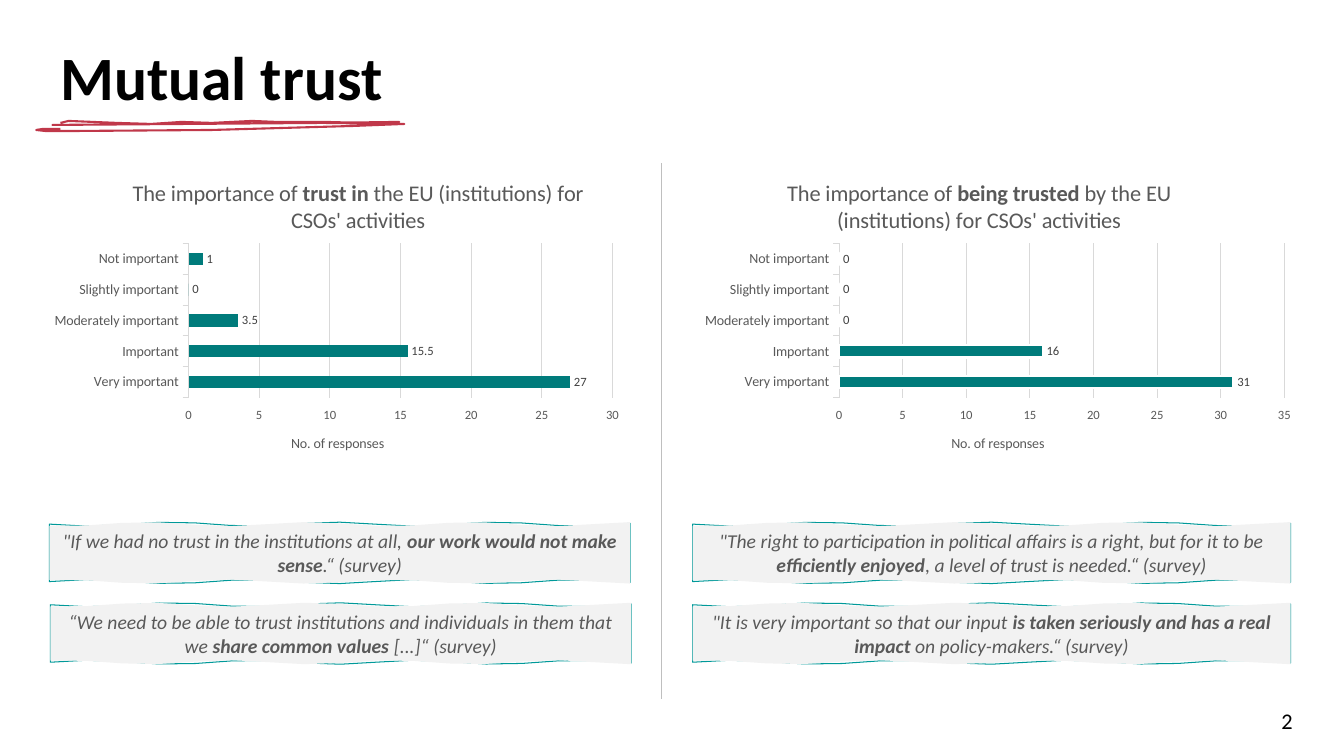
"""Build the slide on mutual trust between CSOs and the EU."""
from math import sin
from lxml import etree
from pptx import Presentation
from pptx.chart.data import CategoryChartData
from pptx.dml.color import RGBColor
from pptx.enum.chart import XL_CHART_TYPE, XL_LABEL_POSITION, XL_TICK_MARK
from pptx.enum.shapes import MSO_CONNECTOR
from pptx.enum.text import MSO_ANCHOR, PP_ALIGN
from pptx.oxml.ns import qn
from pptx.util import Inches, Pt

BAR = XL_CHART_TYPE.BAR_CLUSTERED
END = XL_LABEL_POSITION.OUTSIDE_END
OUT = XL_TICK_MARK.OUTSIDE
MID = MSO_ANCHOR.MIDDLE
CENTER, RIGHT = PP_ALIGN.CENTER, PP_ALIGN.RIGHT
LINE = MSO_CONNECTOR.STRAIGHT
HEX = {"black": "000000", "gray": "595959", "dark": "404040", "grid": "D9D9D9",
       "rule": "BFBFBF", "paper": "F2F2F2", "white": "FFFFFF",
       "bar": "007B7B", "edge": "009999", "red": "C0384A"}
INK = {name: RGBColor.from_string(code) for name, code in HEX.items()}


def write(para, parts, size, ink, bold=(), italic=False):
    """Fill a paragraph with runs; bold lists the indexes of bold ones."""
    for i, part in enumerate(parts):
        run = para.add_run()
        run.text = part
        font = run.font
        font.name, font.size, font.color.rgb = "Calibri", Pt(size), INK[ink]
        font.bold, font.italic = i in bold, italic


def place(box, **spots):
    """Give a chart part a fixed place, as shares of the chart."""
    layout = box.find(qn("c:layout"))
    if layout is None:
        layout = etree.Element(qn("c:layout"))
        box.insert(0, layout)
    manual = etree.SubElement(layout, qn("c:manualLayout"))
    if "w" in spots:
        etree.SubElement(manual, qn("c:layoutTarget")).set("val", "inner")
    for key in "xy":
        etree.SubElement(manual, qn(f"c:{key}Mode")).set("val", "edge")
    for key, val in spots.items():
        etree.SubElement(manual, qn(f"c:{key}")).set("val", str(val))


prs = Presentation()
prs.slide_width, prs.slide_height = Inches(13.33), Inches(7.5)
slide = prs.slides.add_slide(prs.slide_layouts[6])
shapes = slide.shapes

head = shapes.add_textbox(Inches(0.5), Inches(0.07), Inches(11.5), Inches(1.45))
head.text_frame.word_wrap = True
head.text_frame.vertical_anchor = MID
head.text_frame.paragraphs[0].line_spacing = 0.9
write(head.text_frame.paragraphs[0], ["Mutual trust"], 44, "black", [0])

page = shapes.add_textbox(Inches(9.92), Inches(6.97), Inches(3), Inches(0.4))
page.text_frame.word_wrap = True
page.text_frame.paragraphs[0].alignment = RIGHT
write(page.text_frame.paragraphs[0], ["2"], 16, "black")

rule = shapes.add_connector(LINE, Inches(6.56), Inches(6.93), Inches(6.56), Inches(1.62))
rule.line.color.rgb, rule.line.width = INK["rule"], Pt(0.5)
etree.SubElement(rule.element.spPr, qn("a:effectLst"))

dots = [(0.68, 1.2), (1.16, 1.22), (1.5, 1.23), (1.8, 1.21), (2.1, 1.22), (2.5, 1.2),
        (2.74, 1.21), (3.23, 1.21), (3.6, 1.22), (3.96, 1.21), (3.2, 1.22), (0.52, 1.24),
        (3.2, 1.22), (4.01, 1.23), (3.5, 1.25), (2.1, 1.29), (0.72, 1.3), (0.45, 1.3),
        (0.36, 1.29), (0.42, 1.28), (0.6, 1.28)]
pen = shapes.build_freeform(Inches(0.6), Inches(1.22))
pen.add_line_segments([(Inches(x), Inches(y)) for x, y in dots], close=False)
stroke = pen.convert_to_shape()
stroke.shadow.inherit = False
stroke.fill.background()
stroke.line.color.rgb, stroke.line.width = INK["red"], Pt(1.5)

cats = ["Very important", "Important", "Moderately important",
        "Slightly important", "Not important"]
charts = [
    (0.41, 5.84, [27, 15.5, 3.5, 0, 1], 30, 0.25, 0.72,
     ["The importance of ", "trust in", " the EU (institutions) for CSOs' activities"]),
    (6.87, 6.05, [31, 16, 0, 0, 0], 35, 0.24, 0.73,
     ["The importance of ", "being trusted",
      " by the EU (institutions) for CSOs' activities"])]
for left, wide, vals, top, inset, span, title in charts:
    data = CategoryChartData()
    data.categories = cats
    data.add_series("Series 1", vals)
    chart = shapes.add_chart(BAR, Inches(left), Inches(1.62),
                             Inches(wide), Inches(3.06), data).chart
    chart.has_legend = False
    chart.font.name, chart.font.size = "Calibri", Pt(10)
    write(chart.chart_title.text_frame.paragraphs[0], title, 16, "gray", [1])
    place(chart.chart_title.element, x=0.15, y=0.04)
    area = chart.element.find(".//" + qn("c:plotArea"))
    place(area, x=inset, y=0.26, w=span, h=0.5)

    kinds, scale = chart.category_axis, chart.value_axis
    for axis, size in (kinds, 10), (scale, 9):
        font = axis.tick_labels.font
        font.name, font.size, font.color.rgb = "Calibri", Pt(size), INK["gray"]
        axis.major_tick_mark = OUT
    kinds.format.line.color.rgb, kinds.format.line.width = INK["grid"], Pt(0.75)
    scale.format.line.fill.background()
    scale.minimum_scale, scale.maximum_scale, scale.major_unit = 0, top, 5
    grid = scale.major_gridlines.format.line
    grid.color.rgb, grid.width = INK["grid"], Pt(0.75)
    write(scale.axis_title.text_frame.paragraphs[0], ["No. of responses"], 10, "gray")
    place(scale.axis_title.element, x=0.42, y=0.87)

    plot = chart.plots[0]
    plot.gap_width, plot.vary_by_categories = 150, False
    plot.has_data_labels = True
    labels = plot.data_labels
    labels.show_value, labels.position = True, END
    labels.font.name, labels.font.size = "Calibri", Pt(9)
    labels.font.color.rgb = INK["dark"]
    bars = plot.series[0].format
    bars.fill.solid()
    bars.fill.fore_color.rgb = INK["bar"]
    if left > 6:
        bars.line.color.rgb, bars.line.width = INK["white"], Pt(1.5)

quotes = [
    (0.49, 5.2, 5.76, ['"If we had no trust in the institutions at all, ',
                       "our work would not make sense", ".“ (survey)"]),
    (6.87, 5.2, 5.93, ['"The right to participation in political affairs is a right, '
                       "but for it to be ", "efficiently enjoyed",
                       ", a level of trust is needed.“ (survey)"]),
    (0.5, 6, 5.76, ["“We need to be able to trust institutions and individuals "
                    "in them that we ", "share common values ", "[...]“ (survey)"]),
    (6.87, 6, 5.93, ['"It is very important so that our input ',
                     "is taken seriously and has a real impact ",
                     "on policy-makers.“ (survey)"])]
steps = 16
for left, top, wide, parts in quotes:
    for phase in 0, 1:
        wave = [(left + wide * i / steps, 0.02 * sin(1.4 * i + phase))
                for i in range(steps + 1)]
        rim = [(Inches(x), Inches(top + y)) for x, y in wave]
        rim += [(Inches(x), Inches(top + 0.57 - y)) for x, y in reversed(wave)]
        pen = shapes.build_freeform(*rim[0])
        pen.add_line_segments(rim[1:])
        card = pen.convert_to_shape()
        card.shadow.inherit = False
        if phase:
            card.line.fill.background()
            card.fill.solid()
            card.fill.fore_color.rgb = INK["paper"]
        else:
            card.fill.background()
            card.line.color.rgb, card.line.width = INK["edge"], Pt(0.75)
    frame = card.text_frame
    frame.word_wrap, frame.vertical_anchor = True, MID
    frame.paragraphs[0].alignment = CENTER
    write(frame.paragraphs[0], parts, 14, "gray", [1], True)

prs.save("out.pptx")
